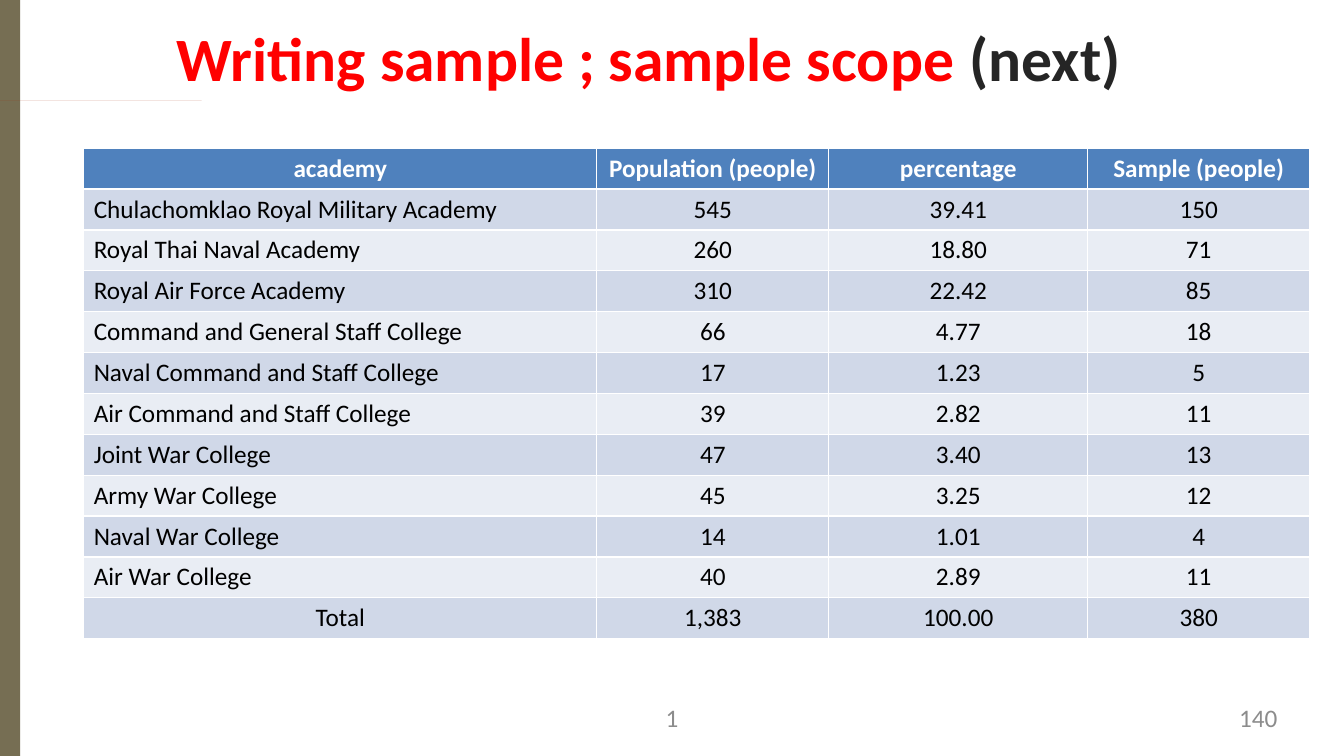
from pptx import Presentation
from pptx.dml.color import RGBColor
from pptx.enum.shapes import MSO_SHAPE as Shape
from pptx.enum.text import MSO_ANCHOR as Anchor, PP_ALIGN as Align
from pptx.util import Inches, Pt

FONT = "Calibri"
WHITE = "FFFFFF"
HEAD = "4F81BD"
BANDS = ["D0D8E8", "E9EDF4"]
COLS = [5.09, 2.3, 2.57, 2.2]
ROWS = [
    ("academy", "Population (people)", "percentage", "Sample (people)"),
    ("Chulachomklao Royal Military Academy", "545", "39.41", "150"),
    ("Royal Thai Naval Academy", "260", "18.80", "71"),
    ("Royal Air Force Academy", "310", "22.42", "85"),
    ("Command and General Staff College", "66", "4.77", "18"),
    ("Naval Command and Staff College", "17", "1.23", "5"),
    ("Air Command and Staff College", "39", "2.82", "11"),
    ("Joint War College", "47", "3.40", "13"),
    ("Army War College", "45", "3.25", "12"),
    ("Naval War College", "14", "1.01", "4"),
    ("Air War College", "40", "2.89", "11"),
    ("Total", "1,383", "100.00", "380"),
]


def color(code):
    return RGBColor.from_string(code)


def style(font, size, code, bold=False):
    font.name = FONT
    font.size = Pt(size)
    font.bold = bold
    font.color.rgb = color(code)


def paint(shape, code):
    shape.shadow.inherit = False
    shape.fill.solid()
    shape.fill.fore_color.rgb = color(code)
    shape.line.fill.background()


def add_side(slide, x, y, w, h):
    bar = slide.shapes.add_shape(
        Shape.RECTANGLE, Inches(x), Inches(y), Inches(w), Inches(h))
    paint(bar, "766E53")


def add_flag(slide, x, y, w, h):
    neck = x + w - 0.26
    tip = x + w
    mid = y + h / 2
    form = slide.shapes.build_freeform(Inches(x), Inches(y), Inches(1))
    form = slide.shapes.build_freeform(x, y, Inches(1))
    form.add_line_segments([
        (neck - 0.01, y), (neck, y + 0.01), (tip - 0.01, mid - 0.02),
        (tip, mid), (tip - 0.01, mid + 0.02), (neck, y + h - 0.01),
        (neck - 0.01, y + h), (x, y + h)])
    paint(form.convert_to_shape(), "A42F0F")


def add_text(slide, x, y, w, h, parts, size, align, bold=False):
    box = slide.shapes.add_textbox(Inches(x), Inches(y), Inches(w), Inches(h))
    frame = box.text_frame
    frame.word_wrap = True
    frame.margin_left = frame.margin_right = 0
    frame.margin_top = frame.margin_bottom = 0
    para = frame.paragraphs[0]
    para.alignment = align
    style(para.font, size, parts[0][1], bold)
    for text, code in parts:
        run = para.add_run()
        run.text = text
        style(run.font, size, code, bold)


def add_grid(slide, x, y, w, h):
    table = slide.shapes.add_table(
        len(ROWS), len(COLS), Inches(x), Inches(y), Inches(w), Inches(h)).table
    for col, width in zip(table.columns, COLS):
        col.width = Inches(width)
    for i, row in enumerate(ROWS):
        head = i == 0
        for j, text in enumerate(row):
            cell = table.cell(i, j)
            cell.fill.solid()
            cell.fill.fore_color.rgb = color(HEAD if head else BANDS[(i - 1) % 2])
            cell.vertical_anchor = Anchor.TOP
            cell.text = text
            para = cell.text_frame.paragraphs[0]
            name = j == 0 and 0 < i < len(ROWS) - 1
            para.alignment = Align.LEFT if name else Align.CENTER
            style(para.font, 18, WHITE if head else "000000", head)


def main():
    deck = Presentation()
    deck.slide_width = Inches(13.33)
    deck.slide_height = Inches(7.5)
    slide = deck.slides.add_slide(deck.slide_layouts[6])
    add_side(slide, 0, 0, 0.2, 7.5)
    add_flag(slide, 0, 0.78, 1.74, 0.56)
    title = [("Writing sample ; sample scope ", "FF0000"), ("(next)", "252525")]
    add_text(slide, 0.75, 0.2, 11.37, 1.26, title, 44, Align.CENTER, True)
    add_text(slide, 9.6, 6.97, 3.07, 0.38, [("140", "8C8C8C")], 18, Align.RIGHT)
    add_text(slide, 4.53, 6.97, 4.27, 0.38, [("1", "8C8C8C")], 18, Align.CENTER)
    add_grid(slide, 0.83, 1.47, 12.17, 4.87)
    deck.save("out.pptx")


if __name__ == "__main__":
    main()
